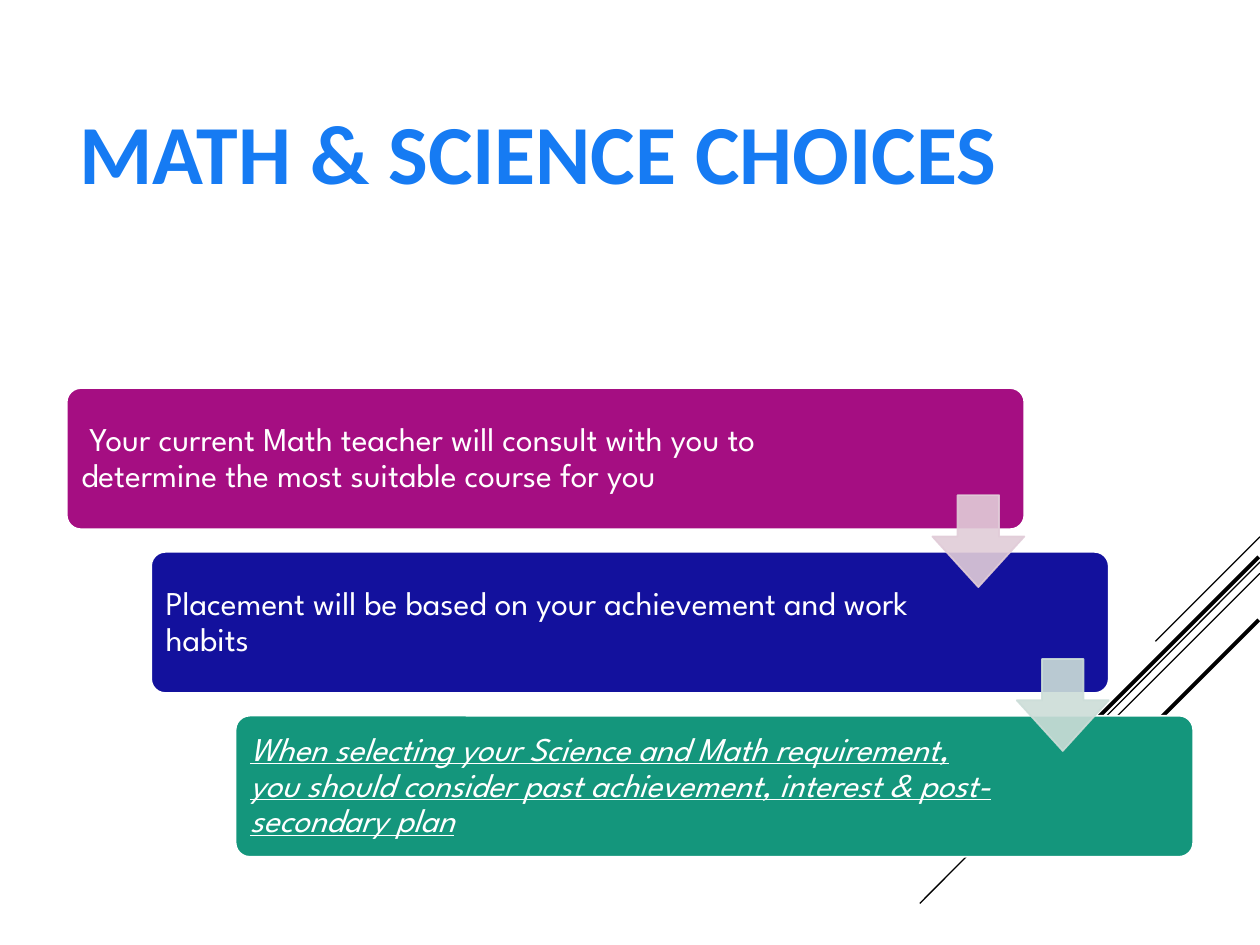
from lxml import etree
from pptx import Presentation
from pptx.dml.color import RGBColor
from pptx.enum.shapes import MSO_CONNECTOR, MSO_SHAPE
from pptx.enum.text import MSO_ANCHOR, PP_ALIGN
from pptx.oxml.ns import qn
from pptx.util import Inches, Pt

STRAIGHT = MSO_CONNECTOR.STRAIGHT
ROUNDED = MSO_SHAPE.ROUNDED_RECTANGLE
DOWN_ARROW = MSO_SHAPE.DOWN_ARROW
MIDDLE = MSO_ANCHOR.MIDDLE
LEFT = PP_ALIGN.LEFT

BLACK = RGBColor(0x00, 0x00, 0x00)
WHITE = RGBColor(0xFF, 0xFF, 0xFF)
TITLE_BLUE = RGBColor(0x16, 0x7B, 0xF3)
MAGENTA = RGBColor(0xA5, 0x0E, 0x82)
NAVY = RGBColor(0x13, 0x11, 0x9D)
TEAL = RGBColor(0x14, 0x96, 0x7C)
PALE_PINK = RGBColor(0xE1, 0xCC, 0xD8)
PALE_GREEN = RGBColor(0xCC, 0xDD, 0xD8)

TITLE_FORMAT = {"name": "Calibri", "size": Pt(48), "bold": True}
STEP_FORMAT = {"name": "League Spartan", "size": Pt(19)}
EMPHASIS = {"italic": True, "underline": True}

# Start x, start y, end x, end y (inches) and width (points)
DIAGONALS = [
    (10, 4.26, 9.17, 5.09, 0.75),
    (10, 4.46, 7.3, 7.17, 0.75),
    (10, 4.55, 8.28, 6.27, 0.75),
    (9.99, 4.42, 8.42, 5.99, 2.25),
    (9.99, 4.92, 8.85, 6.06, 2.25),
]

# Text, card colour, text width, extra font format
STEPS = [
    (" Your current Math teacher will consult with you to determine "
     "the most suitable course for you", MAGENTA, 6.39, {}),
    ("Placement will be based on your achievement and work habits",
     NAVY, 6.13, {}),
    ("When selecting your Science and Math requirement, you should consider "
     "past achievement, interest & post-secondary plan", TEAL, 6.13, EMPHASIS),
]
ARROW_COLORS = [PALE_PINK, PALE_GREEN]


def add_text(slide, box, text, color, formats, inset_x, inset_y):
    text_box = slide.shapes.add_textbox(*map(Inches, box))
    frame = text_box.text_frame
    margins = {
        "margin_left": inset_x, "margin_right": inset_x,
        "margin_top": inset_y, "margin_bottom": inset_y,
    }
    for name, value in margins.items():
        setattr(frame, name, Inches(value))
    frame.word_wrap = True
    frame.vertical_anchor = MIDDLE
    paragraph = frame.paragraphs[0]
    paragraph.alignment = LEFT
    paragraph.line_spacing = 0.9
    run = paragraph.add_run()
    run.text = text
    run.font.color.rgb = color
    for name, value in formats.items():
        setattr(run.font, name, value)


def add_solid_shape(slide, kind, box, fill, line, adjustments, opacity=100):
    shape = slide.shapes.add_shape(kind, *map(Inches, box))
    shape.shadow.inherit = False
    for index, value in enumerate(adjustments):
        shape.adjustments[index] = value
    shape.fill.solid()
    shape.fill.fore_color.rgb = fill
    shape.line.color.rgb = line
    shape.line.width = Pt(1)
    if opacity < 100:
        for color in shape._element.spPr.iter(qn("a:srgbClr")):
            etree.SubElement(color, qn("a:alpha"), val=str(opacity * 1000))


def add_diagonals(slide):
    for *ends, width in DIAGONALS:
        connector = slide.shapes.add_connector(STRAIGHT, *map(Inches, ends))
        connector.line.color.rgb = BLACK
        connector.line.width = Pt(width)
        etree.SubElement(connector._element.spPr, qn("a:effectLst"))


def add_staircase(slide, left, top, width, height):
    card_width, card_height = 7.6, 1.12
    gaps = len(STEPS) - 1
    step_x = (width - card_width) / gaps
    step_y = (height - card_height) / gaps
    pad = 0.035
    arrow_size = 0.73

    # Cards with their text
    for index, (text, color, text_width, extra) in enumerate(STEPS):
        x, y = left + index * step_x, top + index * step_y
        add_solid_shape(slide, ROUNDED, (x, y, card_width, card_height),
                        color, WHITE, [0.1])
        add_text(slide, (x + pad, y + pad, text_width, card_height - 2 * pad),
                 text, WHITE, {**STEP_FORMAT, **extra}, 0.08, 0.08)

    # Arrows leading from each card to the next
    for index, color in enumerate(ARROW_COLORS):
        x = left + index * step_x + card_width - arrow_size
        y = top + index * step_y + 0.85
        add_solid_shape(slide, DOWN_ARROW, (x, y, arrow_size, arrow_size),
                        color, color, [0.45, 0.55], opacity=90)


def main():
    presentation = Presentation()
    presentation.slide_width = Inches(10)
    presentation.slide_height = Inches(7.5)
    slide = presentation.slides.add_slide(presentation.slide_layouts[6])
    add_diagonals(slide)
    add_text(slide, (0.53, 0.69, 8.59, 1.11), "MATH & SCIENCE CHOICES",
             TITLE_BLUE, TITLE_FORMAT, 0.1, 0.05)
    add_staircase(slide, 0.53, 3.08, 8.94, 3.72)
    presentation.save("out.pptx")


if __name__ == "__main__":
    main()
